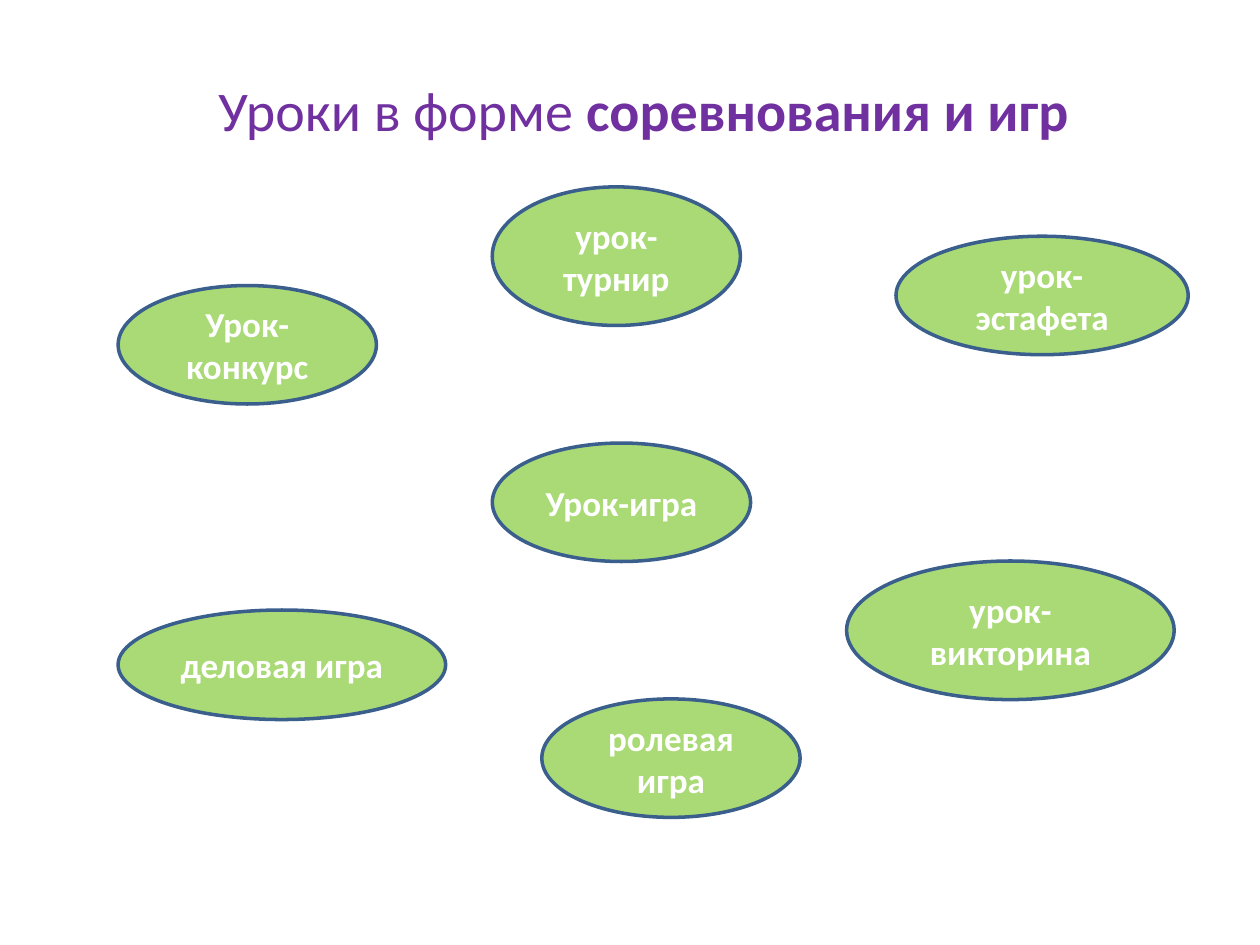
"""Build a slide of lesson types held as contests and games."""
from dataclasses import dataclass

from lxml.etree import SubElement as Sub
from pptx import Presentation
from pptx.dml.color import RGBColor as Color
from pptx.enum.shapes import MSO_SHAPE as Shape
from pptx.enum.text import MSO_ANCHOR as Anchor, MSO_AUTO_SIZE as Fit, PP_ALIGN as Align
from pptx.oxml.ns import qn
from pptx.util import Pt


@dataclass(frozen=True)
class Theme:
    font: str = "Calibri"
    head: Color = Color(0x70, 0x30, 0xA0)
    fill: Color = Color(0x92, 0xD0, 0x50)
    line: Color = Color(0x3A, 0x5F, 0x8C)
    text: Color = Color(0xFF, 0xFF, 0xFF)
    big: int = 32
    body: int = 20
    alpha: int = 78


THEME = Theme()
LESSONS = [
    ("Урок-конкурс", 67.5, 163.2, 147.6, 67.7),
    ("урок-турнир", 281.3, 106.8, 141.8, 79.2),
    ("урок-эстафета", 512, 135, 167, 67.7),
    ("деловая игра", 67.5, 348.6, 187.2, 62.6),
    ("Урок-игра", 281.3, 253.2, 147.6, 67.7),
    ("ролевая игра", 309.6, 399.4, 147.6, 67.7),
    ("урок-викторина", 483.8, 320.6, 187.2, 79.2),
]


def assign(item, values):
    for name, value in values.items():
        setattr(item, name, value)


def add_run(para, text, size, color, bold):
    run = para.add_run()
    run.text = text
    assign(run.font, {"name": THEME.font, "size": Pt(size), "bold": bold})
    run.font.color.rgb = color


def add_oval(slide, text, *box):
    oval = slide.shapes.add_shape(Shape.OVAL, *map(Pt, box))
    oval.shadow.inherit = False
    oval.fill.solid()
    oval.fill.fore_color.rgb = THEME.fill
    tint = oval.fill._xPr.find(qn("a:solidFill"))[0]
    Sub(tint, qn("a:alpha"), val=str(THEME.alpha * 1000))
    oval.line.color.rgb = THEME.line
    oval.line.width = Pt(2)
    frame = oval.text_frame
    assign(frame, {"word_wrap": True, "vertical_anchor": Anchor.MIDDLE})
    para = frame.paragraphs[0]
    para.alignment = Align.CENTER
    add_run(para, text, THEME.body, THEME.text, True)


def add_title(slide, parts, *box):
    frame = slide.shapes.add_textbox(*map(Pt, box)).text_frame
    assign(frame, {"word_wrap": False, "auto_size": Fit.SHAPE_TO_FIT_TEXT})
    para = frame.paragraphs[0]
    para.alignment = Align.CENTER
    for text, bold in parts:
        add_run(para, text, THEME.big, THEME.head, bold)


def main():
    deck = Presentation()
    assign(deck, {"slide_width": Pt(720), "slide_height": Pt(540)})
    slide = deck.slides.add_slide(deck.slide_layouts[6])
    for lesson in LESSONS:
        add_oval(slide, *lesson)
    parts = [("Уроки в форме ", False), ("соревнования и игр", True)]
    add_title(slide, parts, 115.2, 39.6, 505.4, 46)
    deck.save("out.pptx")


if __name__ == "__main__":
    main()
